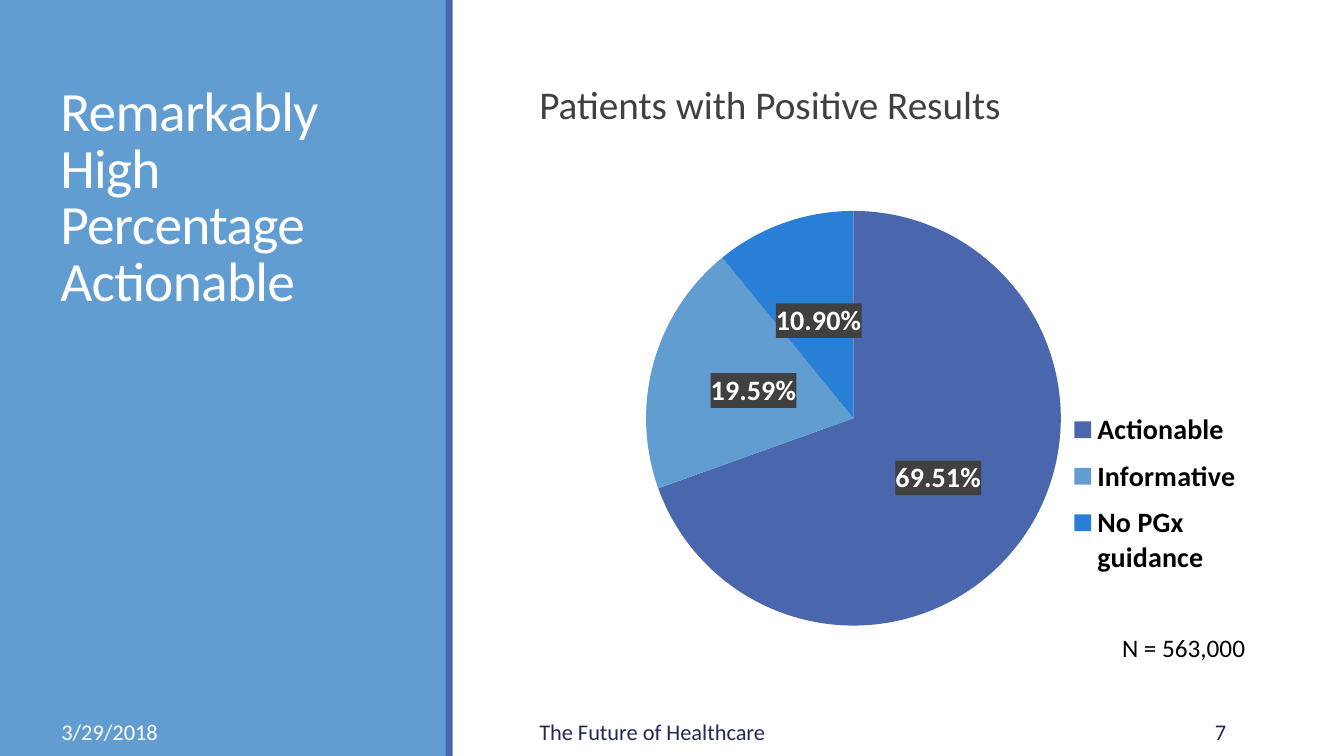
from pptx import Presentation
from pptx.chart.data import CategoryChartData as Data
from pptx.dml.color import RGBColor
from pptx.enum.chart import XL_CHART_TYPE as Kind, XL_LABEL_POSITION as Spot, XL_LEGEND_POSITION as Side
from pptx.enum.shapes import MSO_SHAPE as Form
from pptx.enum.text import MSO_ANCHOR as Anchor, PP_ALIGN as Align
from pptx.oxml import parse_xml
from pptx.oxml.ns import nsdecls, qn
from pptx.util import Inches, Pt

BLUE = RGBColor(0x4A, 0x66, 0xAC)
SKY = RGBColor(0x62, 0x9D, 0xD1)
AZURE = RGBColor(0x29, 0x7F, 0xD5)
NAVY = RGBColor(0x24, 0x28, 0x52)
GRAY = RGBColor(0x40, 0x40, 0x40)
BLACK = RGBColor(0, 0, 0)
WHITE = RGBColor(0xFF, 0xFF, 0xFF)
FONT = "Calibri"
SHARES = {"Actionable": 69.51, "Informative": 19.59, "No PGx guidance": 10.9}


def style(font, size, color, bold=False):
    """Set the face, size, colour and weight of a font."""
    font.name, font.size, font.bold = FONT, Pt(size), bold
    font.color.rgb = color


def add_bar(slide, left, width, color):
    """Add a full-height plain bar."""
    bar = slide.shapes.add_shape(Form.RECTANGLE, Inches(left), 0, Inches(width), Inches(7.5))
    bar.shadow.inherit = False
    bar.fill.solid()
    bar.fill.fore_color.rgb = color
    bar.line.fill.background()


def add_text(slide, text, box, size, color, anchor=Anchor.TOP, align=Align.LEFT, space=1.0):
    """Add a wrapped one-paragraph text box and return its run."""
    frame = slide.shapes.add_textbox(*map(Inches, box)).text_frame
    frame.word_wrap = True
    frame.vertical_anchor = anchor
    frame.text = text
    para = frame.paragraphs[0]
    para.alignment, para.line_spacing = align, space
    run = para.runs[0]
    style(run.font, size, color)
    return run


def place(parent, index, inner, x, y, w, h):
    """Give a chart part a fixed layout in fractions of the chart."""
    for old in parent.findall(qn("c:layout")):
        parent.remove(old)
    target = '<c:layoutTarget val="inner"/>' if inner else ""
    parent.insert(index, parse_xml(
        f'<c:layout {nsdecls("c")}><c:manualLayout>{target}'
        '<c:xMode val="edge"/><c:yMode val="edge"/>'
        f'<c:x val="{x}"/><c:y val="{y}"/><c:w val="{w}"/><c:h val="{h}"/>'
        '</c:manualLayout></c:layout>'))


def add_labels(plot):
    """Show white percentages on dark boxes."""
    plot.has_data_labels = True
    labels = plot.data_labels
    labels.show_percentage, labels.show_value = True, False
    labels.number_format, labels.number_format_is_linked = "0.00%", False
    labels.position = Spot.CENTER
    style(labels.font, 20, WHITE, True)
    labels._element.find(qn("c:numFmt")).addnext(parse_xml(
        f'<c:spPr {nsdecls("c", "a")}><a:solidFill><a:srgbClr val="{GRAY}"/>'
        '</a:solidFill></c:spPr>'))


def add_pie(slide, box):
    """Add the pie of patient shares with its legend."""
    data = Data()
    data.categories = list(SHARES)
    data.add_series("Series 1", list(SHARES.values()))
    chart = slide.shapes.add_chart(Kind.PIE, *map(Inches, box), data).chart
    chart.has_title = False
    style(chart.font, 10, BLACK)
    plot = chart.plots[0]
    plot.vary_by_categories = True
    for i, color in enumerate((BLUE, SKY, AZURE)):
        fill = plot.series[0].points[i].format.fill
        fill.solid()
        fill.fore_color.rgb = color
    add_labels(plot)
    chart.has_legend = True
    legend = chart.legend
    legend.position, legend.include_in_layout = Side.RIGHT, False
    style(legend.font, 20, BLACK, True)
    place(legend._element, 1, False, 0.65, 0.46, 0.25, 0.42)
    place(chart._chartSpace.find(".//" + qn("c:plotArea")), 0, True, 0.1, 0.03, 0.55, 0.94)


def main():
    """Build the slide and save it."""
    deck = Presentation()
    deck.slide_width, deck.slide_height = Inches(13.33), Inches(7.5)
    slide = deck.slides.add_slide(deck.slide_layouts[6])
    add_bar(slide, 0, 4.43, SKY)
    add_bar(slide, 4.42, 0.07, BLUE)
    title = add_text(slide, "Remarkably High Percentage Actionable", (0.5, 0.65, 3.5, 2.5),
                     39.6, WHITE, Anchor.BOTTOM, space=0.85)
    title.font._element.set("spc", "-50")
    add_text(slide, "Patients with Positive Results", (5.25, 0.8, 8.01, 0.6), 28, GRAY, space=0.9)
    for text, left, width, color, align in (
            ("3/29/2018", 0.51, 2.86, WHITE, Align.LEFT),
            ("The Future of Healthcare", 5.25, 5.08, NAVY, Align.LEFT),
            ("7", 10.83, 1.43, NAVY, Align.RIGHT)):
        add_text(slide, text, (left, 7.06, width, 0.4), 16, color, Anchor.MIDDLE, align)
    add_pie(slide, (5.66, 1.95, 7.48, 4.4))
    add_text(slide, "N = 563,000", (11.03, 6.22, 1.85, 0.4), 18, BLACK)
    deck.save("out.pptx")


if __name__ == "__main__":
    main()
